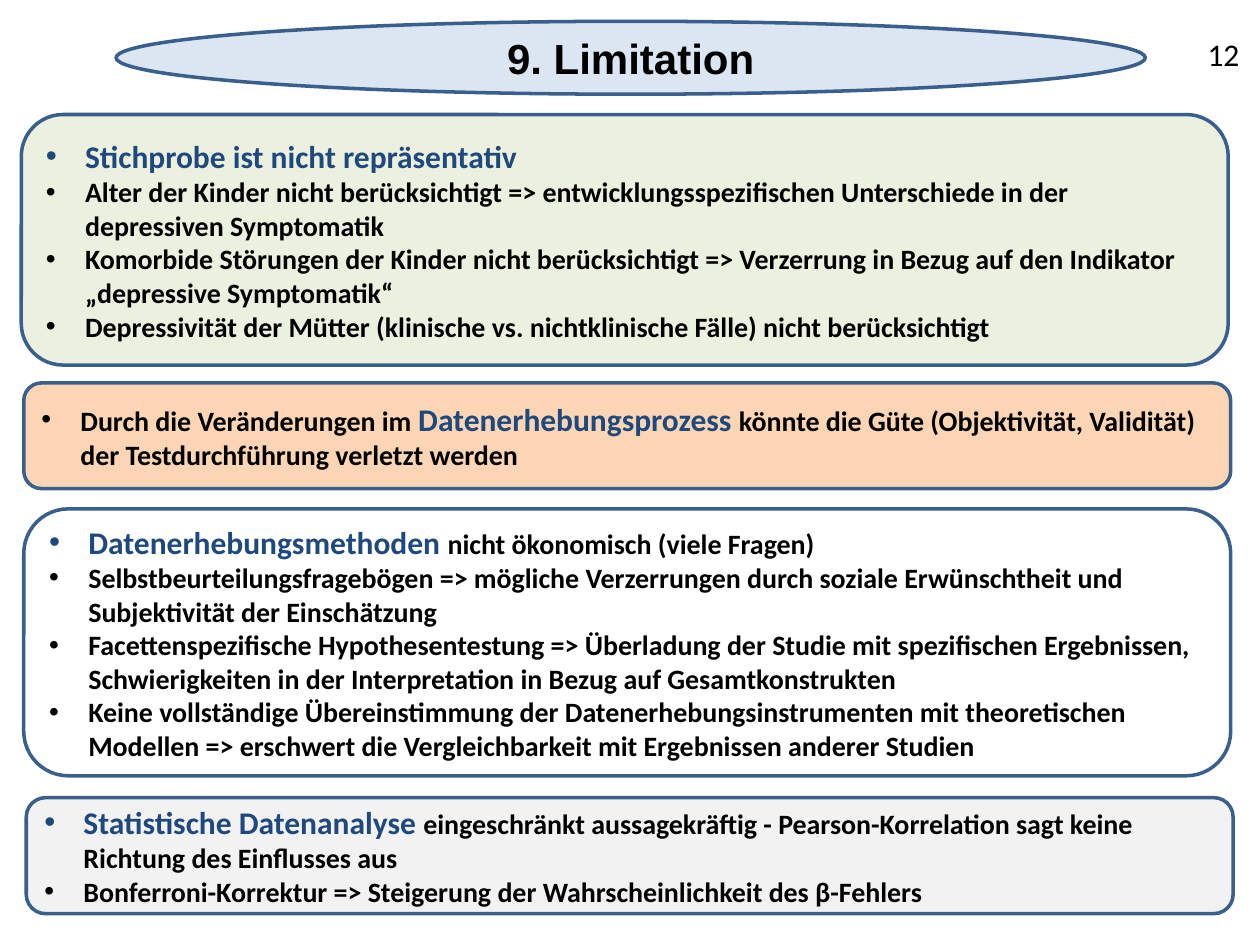
import dataclasses
import typing

import pptx
import pptx.dml.color
import pptx.enum.shapes
import pptx.enum.text
import pptx.oxml.ns
import pptx.util
from lxml import etree

Cm = pptx.util.Cm
Pt = pptx.util.Pt
Kind = pptx.enum.shapes.MSO_SHAPE
Align = pptx.enum.text.PP_ALIGN
Anchor = pptx.enum.text.MSO_ANCHOR

HUES = {
    "line": "3A5F8C", "text": "000000", "key": "1F497D", "title": "DCE6F2",
    "green": "EBF1DE", "peach": "FCD5B5", "white": "FFFFFF", "grey": "F2F2F2",
}
FORMS = {
    "title": {"name": "Arial", "size": Pt(24), "bold": True},
    "key": {"name": "Calibri", "size": Pt(18), "bold": True},
    "text": {"name": "Calibri", "size": Pt(16), "bold": True},
    "page": {"name": "Calibri", "size": Pt(18), "bold": False},
}
LEFT, WIDTH, INDENT = 0.48, 24.33, 0.79


class Part(typing.NamedTuple):
    text: str
    form: str = "text"


Line = list[Part]


@dataclasses.dataclass
class Panel:
    left: float
    top: float
    height: float
    fill: str
    lines: list[Line]


PANELS = [
    Panel(0.43, 2.31, 5.05, "green", [
        [Part("Stichprobe ist nicht repräsentativ", "key")],
        [Part("Alter der Kinder nicht berücksichtigt => entwicklungsspezifischen "
              "Unterschiede in der depressiven Symptomatik")],
        [Part("Komorbide Störungen der Kinder nicht berücksichtigt => Verzerrung "
              "in Bezug auf den Indikator „depressive Symptomatik“")],
        [Part("Depressivität der Mütter (klinische vs. nichtklinische Fälle) "
              "nicht berücksichtigt")],
    ]),
    Panel(LEFT, 7.72, 2.13, "peach", [
        [Part("Durch die Veränderungen im "),
         Part("Datenerhebungsprozess ", "key"),
         Part("könnte die Güte (Objektivität, Validität) der Testdurchführung "
              "verletzt werden")],
    ]),
    Panel(LEFT, 10.26, 5.38, "white", [
        [Part("Datenerhebungsmethoden ", "key"),
         Part("nicht ökonomisch (viele Fragen)")],
        [Part("Selbstbeurteilungsfragebögen => mögliche Verzerrungen durch soziale "
              "Erwünschtheit und Subjektivität der Einschätzung")],
        [Part("Facettenspezifische Hypothesentestung => Überladung der Studie mit "
              "spezifischen Ergebnissen, Schwierigkeiten in der Interpretation in "
              "Bezug auf Gesamtkonstrukten")],
        [Part("Keine vollständige Übereinstimmung der Datenerhebungsinstrumenten mit "
              "theoretischen Modellen => erschwert die Vergleichbarkeit mit "
              "Ergebnissen anderer Studien")],
    ]),
    Panel(0.53, 16.08, 2.34, "grey", [
        [Part("Statistische Datenanalyse ", "key"),
         Part("eingeschränkt aussagekräftig - Pearson-Korrelation sagt keine "
              "Richtung des Einflusses aus")],
        [Part("Bonferroni-Korrektur => Steigerung der Wahrscheinlichkeit "
              "des β-Fehlers")],
    ]),
]


def tint(name: str) -> pptx.dml.color.RGBColor:
    return pptx.dml.color.RGBColor.from_string(HUES[name])


def add_dot(para) -> None:
    """Give the paragraph a bullet with a hanging indent."""
    props = para._p.get_or_add_pPr()
    props.set("marL", str(Cm(INDENT)))
    props.set("indent", str(-Cm(INDENT)))
    for tag, key, value in (("a:buFont", "typeface", "Arial"), ("a:buChar", "char", "•")):
        etree.SubElement(props, pptx.oxml.ns.qn(tag)).set(key, value)


def write(shape, lines: list[Line], dots: bool = False) -> None:
    frame = shape.text_frame
    frame.word_wrap = True
    frame.vertical_anchor = Anchor.MIDDLE
    for i, line in enumerate(lines):
        para = frame.add_paragraph() if i else frame.paragraphs[0]
        para.alignment = Align.LEFT if dots else Align.CENTER
        if dots:
            add_dot(para)
        for part in line:
            run = para.add_run()
            run.text = part.text
            for key, value in FORMS[part.form].items():
                setattr(run.font, key, value)
            run.font.color.rgb = tint("key" if part.form == "key" else "text")


def add_box(slide, kind, left: float, top: float, width: float, height: float, fill: str):
    box = slide.shapes.add_shape(kind, Cm(left), Cm(top), Cm(width), Cm(height))
    box.shadow.inherit = False
    box.fill.solid()
    box.fill.fore_color.rgb = tint(fill)
    box.line.color.rgb = tint("line")
    box.line.width = Pt(2)
    return box


def main() -> None:
    deck = pptx.Presentation()
    deck.slide_width, deck.slide_height = Cm(25.4), Cm(19.05)
    slide = deck.slides.add_slide(deck.slide_layouts[6])

    title = add_box(slide, Kind.OVAL, 2.34, 0.43, 20.75, 1.47, "title")
    write(title, [[Part("9. Limitation", "title")]])

    for panel in PANELS:
        box = add_box(slide, Kind.ROUNDED_RECTANGLE, panel.left, panel.top,
                      WIDTH, panel.height, panel.fill)
        write(box, panel.lines, dots=True)

    page = slide.shapes.add_textbox(Cm(23.93), Cm(0.46), Cm(1.47), Cm(1.27))
    write(page, [[Part("12", "page")]])

    deck.save("out.pptx")


if __name__ == "__main__":
    main()
